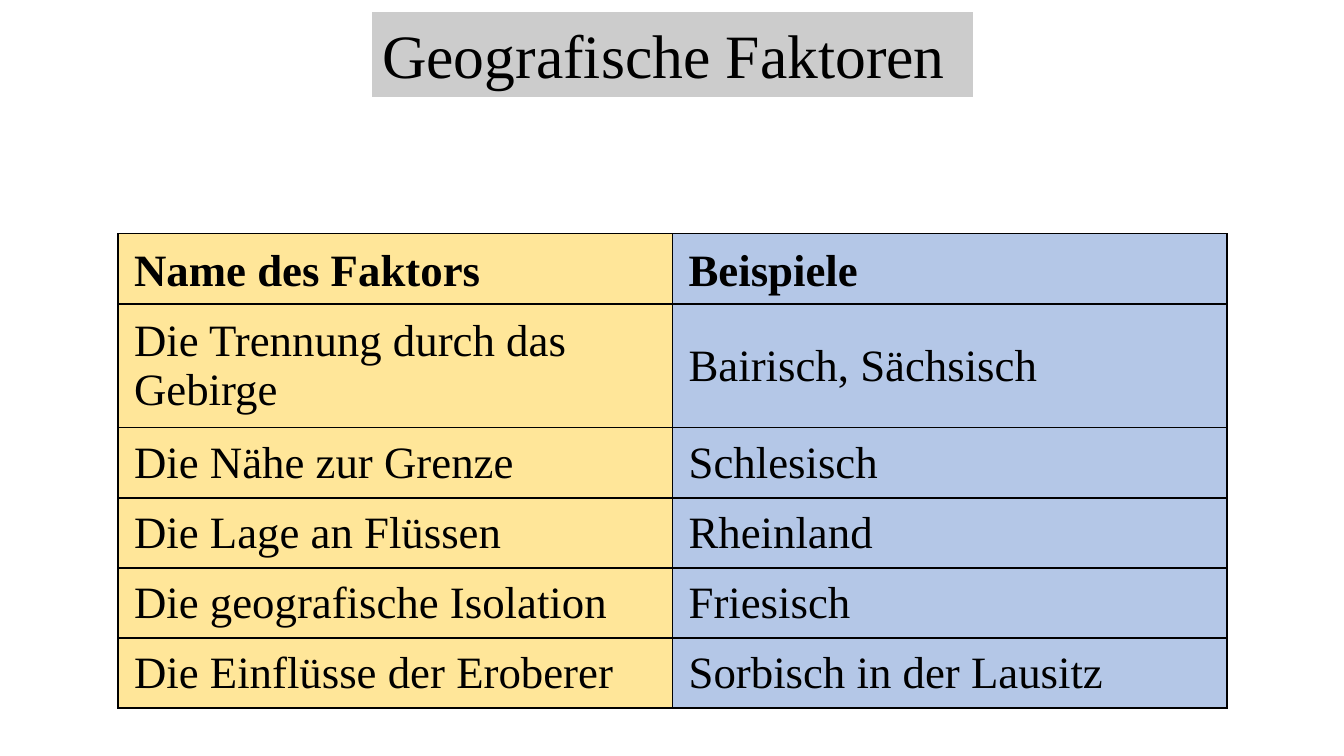
from lxml import etree
from pptx import Presentation
from pptx.dml.color import RGBColor
from pptx.enum.text import MSO_ANCHOR, MSO_AUTO_SIZE, PP_ALIGN
from pptx.oxml.ns import qn
from pptx.util import Inches, Pt

TOP, MIDDLE, BOTTOM = MSO_ANCHOR.TOP, MSO_ANCHOR.MIDDLE, MSO_ANCHOR.BOTTOM
LEFT = PP_ALIGN.LEFT
NO_FIT = MSO_AUTO_SIZE.NONE
FONT = "Times New Roman"
COLORS = {"ink": "000000", "factor": "FFE699", "example": "B4C7E7"}
ROWS = [
    ("Name des Faktors", "Beispiele"),
    ("Die Trennung durch das Gebirge", "Bairisch, Sächsisch"),
    ("Die Nähe zur Grenze", "Schlesisch"),
    ("Die Lage an Flüssen", "Rheinland"),
    ("Die geografische Isolation", "Friesisch"),
    ("Die Einflüsse der Eroberer", "Sorbisch in der Lausitz"),
]
COL_W, ROW_H, TALL_H = 5.5, 0.695, 1.23


def write(frame, text, size, bold=False):
    para = frame.paragraphs[0]
    para.alignment = LEFT
    para.line_spacing = 1.0
    run = para.add_run()
    run.text = text
    run.font.name = FONT
    run.font.size = Pt(size)
    run.font.bold = bold
    run.font.color.rgb = RGBColor.from_string(COLORS["ink"])


def frame_cell(cell):
    """Draw a thin line on all four sides; lines must precede the fill."""
    props = cell._tc.get_or_add_tcPr()
    for side in ("a:lnL", "a:lnR", "a:lnT", "a:lnB"):
        line = etree.SubElement(props, qn(side), w=str(Pt(1)))
        fill = etree.SubElement(line, qn("a:solidFill"))
        etree.SubElement(fill, qn("a:srgbClr"), val=COLORS["ink"])


deck = Presentation()
deck.slide_width, deck.slide_height = Inches(13.33), Inches(7.5)
slide = deck.slides.add_slide(deck.slide_layouts[5])

# Title on a see-through dark band
title = slide.shapes.title
title.left, title.top = Inches(3.69), Inches(0.12)
title.width, title.height = Inches(5.96), Inches(0.84)
title.fill.solid()
title.fill.fore_color.rgb = RGBColor.from_string(COLORS["ink"])
tint = title._element.spPr.find(".//" + qn("a:srgbClr"))
etree.SubElement(tint, qn("a:alpha"), val="20000")
frame = title.text_frame
frame.word_wrap = True
frame.auto_size = NO_FIT
frame.vertical_anchor = TOP
write(frame, "Geografische Faktoren", 44)

# Table of factors and examples
table = slide.shapes.add_table(
    len(ROWS), 2, Inches(1.17), Inches(2.32),
    Inches(2 * COL_W), Inches(5 * ROW_H + TALL_H)).table
table.first_row = table.horz_banding = False
for col in table.columns:
    col.width = Inches(COL_W)
for r, texts in enumerate(ROWS):
    table.rows[r].height = Inches(TALL_H if r == 1 else ROW_H)
    for c, (text, key) in enumerate(zip(texts, ("factor", "example"))):
        cell = table.cell(r, c)
        frame_cell(cell)
        cell.fill.solid()
        cell.fill.fore_color.rgb = RGBColor.from_string(COLORS[key])
        cell.margin_left = cell.margin_right = Inches(0.16)
        cell.margin_top = cell.margin_bottom = Inches(0.08)
        cell.vertical_anchor = MIDDLE if r else BOTTOM
        write(cell.text_frame, text, 32, bold=r == 0)

deck.save("out.pptx")
